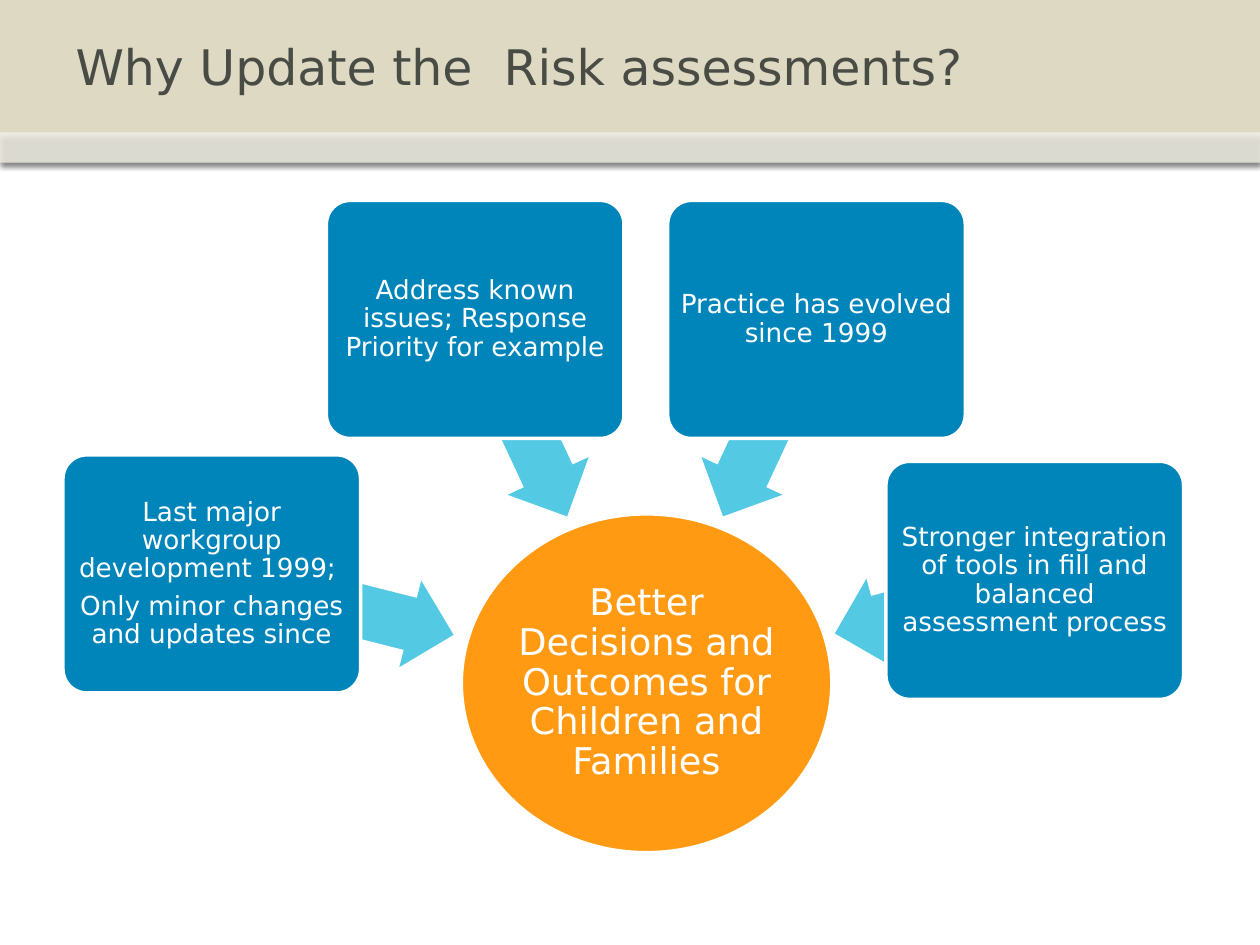
"""Build a slide with four reasons pointing at one central outcome."""
from dataclasses import dataclass

from lxml import etree
from pptx import Presentation
from pptx.dml.color import RGBColor
from pptx.enum.shapes import MSO_SHAPE
from pptx.enum.text import MSO_ANCHOR, PP_ALIGN
from pptx.oxml.ns import qn
from pptx.util import Cm, Pt

RECTANGLE = MSO_SHAPE.RECTANGLE
ROUNDED = MSO_SHAPE.ROUNDED_RECTANGLE
OVAL = MSO_SHAPE.OVAL
LEFT_ARROW = MSO_SHAPE.LEFT_ARROW
MIDDLE = MSO_ANCHOR.MIDDLE
CENTER, LEFT = PP_ALIGN.CENTER, PP_ALIGN.LEFT

FONT = "DejaVu Sans"
WHITE, SAND, GREY = "FFFFFF", "DDD9C3", "484C45"
BLUE, CYAN, ORANGE = "0085BA", "53C9E4", "FF9A12"
SLIDE_W, SLIDE_H = 25.4, 19.05
HEADER_H, TITLE_H = 3.28, 2.67
BOX_W, BOX_H, ARROW_H = 6, 4.8, 1.8


@dataclass
class Arrow:
    left: float
    top: float
    length: float
    angle: float


@dataclass
class Reason:
    left: float
    top: float
    paragraphs: list[str]
    arrow: Arrow


REASONS = [
    Reason(1.27, 9.17,
           ["Last major workgroup development 1999; ",
            "Only minor changes and updates since"],
           Arrow(4.19, 11.28, 5.03, 194.2)),
    Reason(6.58, 4.04,
           ["Address known issues; Response Priority for example"],
           Arrow(8.31, 7.52, 4.39, 245)),
    Reason(13.46, 4.04,
           ["Practice has evolved since 1999"],
           Arrow(13.31, 7.52, 4.39, 295)),
    Reason(17.86, 9.3,
           ["Stronger integration of tools in fill and balanced assessment process"],
           Arrow(16.76, 11.33, 4.17, 345)),
]


def color(value: str) -> RGBColor:
    """Turn a hex string into a colour."""
    return RGBColor.from_string(value)


def add_filled(shapes, preset, left: float, top: float, width: float,
               height: float, fill: str, outlined: bool = False):
    """Add a flat filled shape, with a white outline if asked."""
    shape = shapes.add_shape(preset, Cm(left), Cm(top), Cm(width), Cm(height))
    shape.shadow.inherit = False
    shape.fill.solid()
    shape.fill.fore_color.rgb = color(fill)
    if outlined:
        shape.line.color.rgb = color(WHITE)
        shape.line.width = Pt(2)
    else:
        shape.line.fill.background()
    return shape


def add_alpha(color_element, percent: int) -> None:
    """Set the opacity of a colour element."""
    etree.SubElement(color_element, qn("a:alpha"), val=str(percent * 1000))


def add_band(shapes, top: float, height: float, fill: str, opacity: int = 100) -> None:
    """Add a full-width header band with a soft shadow below."""
    band = add_filled(shapes, RECTANGLE, 0, top, SLIDE_W, height, fill)
    properties = band._element.spPr
    if opacity < 100:
        add_alpha(properties.find(qn("a:solidFill"))[0], opacity)
    shadow = etree.SubElement(
        properties.find(qn("a:effectLst")), qn("a:outerShdw"),
        blurRad=str(Pt(3.1)), dist=str(Pt(1.8)), dir="5400000", rotWithShape="0")
    add_alpha(etree.SubElement(shadow, qn("a:srgbClr"), val="000000"), 35)


def add_run(paragraph, text: str, size: float, text_color: str) -> None:
    """Add one formatted run to a paragraph."""
    run = paragraph.add_run()
    run.text = text
    run.font.name = FONT
    run.font.size = Pt(size)
    run.font.color.rgb = color(text_color)


def write_centred(shape, paragraphs: list[str], size: float, inset: float) -> None:
    """Write white centred paragraphs into a shape."""
    frame = shape.text_frame
    frame.word_wrap = True
    frame.vertical_anchor = MIDDLE
    frame.margin_left = frame.margin_right = Cm(inset)
    frame.margin_top = frame.margin_bottom = Cm(inset)
    for index, text in enumerate(paragraphs):
        paragraph = frame.add_paragraph() if index else frame.paragraphs[0]
        paragraph.alignment = CENTER
        paragraph.line_spacing = 0.9
        paragraph.space_after = Pt(0.35 * size)
        add_run(paragraph, text, size, WHITE)


def add_title(shapes, text: str) -> None:
    """Place the title in front of the header bands."""
    title = shapes.title
    title.left, title.top = Cm(1.27), Cm(0)
    title.width, title.height = Cm(22.86), Cm(TITLE_H)
    title.text_frame.vertical_anchor = MIDDLE
    paragraph = title.text_frame.paragraphs[0]
    paragraph.alignment = LEFT
    add_run(paragraph, text, 28, GREY)
    shapes._spTree.append(title._element)


def add_reason(shapes, reason: Reason) -> None:
    """Add a reason box and the arrow that runs from behind it."""
    arrow = add_filled(shapes, LEFT_ARROW, reason.arrow.left, reason.arrow.top,
                       reason.arrow.length, ARROW_H, CYAN)
    arrow.rotation = reason.arrow.angle
    arrow.adjustments[0] = 0.6
    arrow.adjustments[1] = 0.5
    box = add_filled(shapes, ROUNDED, reason.left, reason.top,
                     BOX_W, BOX_H, BLUE, outlined=True)
    box.adjustments[0] = 0.1
    write_centred(box, reason.paragraphs, 15, 0.07)


def main() -> None:
    """Build and save the slide."""
    deck = Presentation()
    deck.slide_width, deck.slide_height = Cm(SLIDE_W), Cm(SLIDE_H)
    shapes = deck.slides.add_slide(deck.slide_layouts[5]).shapes
    add_band(shapes, 0, HEADER_H, SAND)
    add_band(shapes, TITLE_H, HEADER_H - TITLE_H, WHITE, 53)
    add_title(shapes, "Why Update the  Risk assessments?")
    outcome = add_filled(shapes, OVAL, 9.3, 10.36, 7.47, 6.83, ORANGE, outlined=True)
    write_centred(
        outcome, ["Better Decisions and Outcomes for Children and Families"], 21, 0.03)
    for reason in REASONS:
        add_reason(shapes, reason)
    deck.save("out.pptx")


if __name__ == "__main__":
    main()
